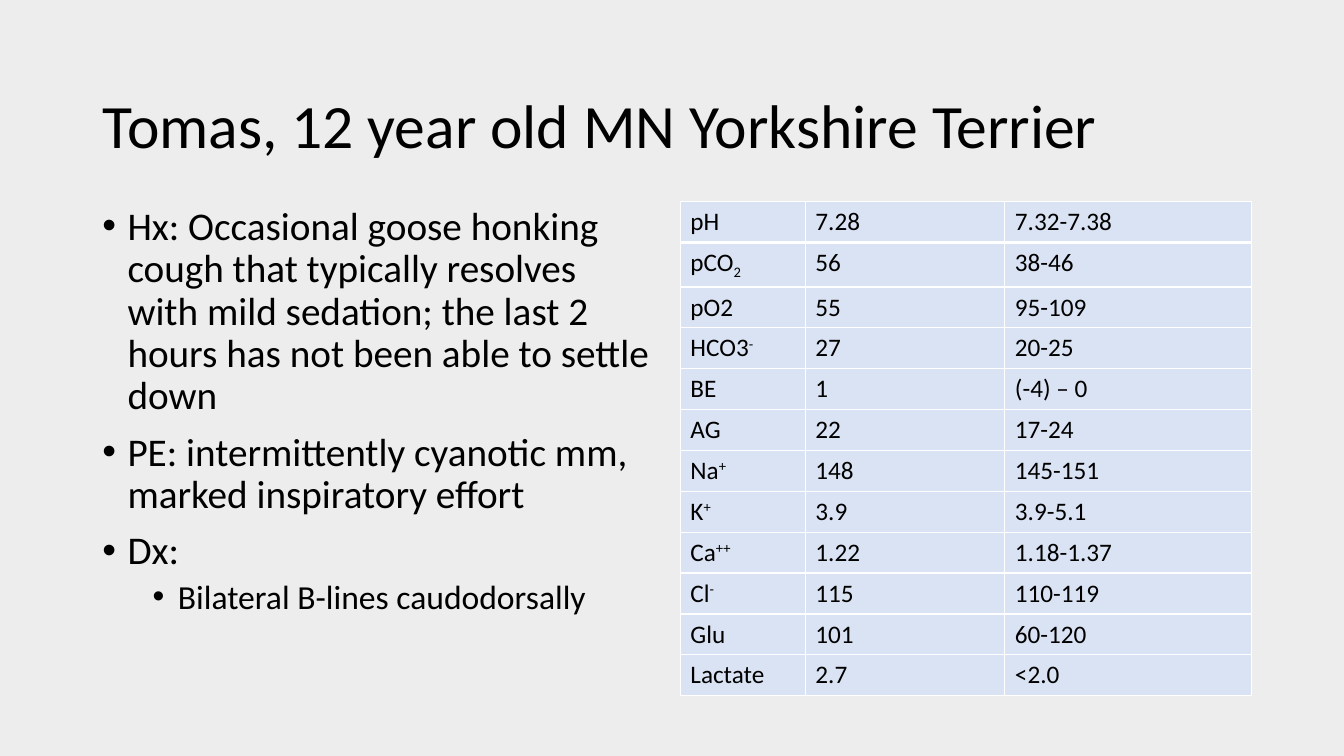
from pptx import Presentation
from pptx.dml.color import RGBColor
from pptx.enum.text import MSO_ANCHOR as Anchor, MSO_AUTO_SIZE as AutoSize, PP_ALIGN as Align
from pptx.oxml.ns import qn
from pptx.util import Pt
from lxml.etree import SubElement

COLORS = {"background": "EDEDED", "text": "000000", "cell": "DAE3F3", "border": "FFFFFF"}
FONT = "Calibri"
TITLE = "Tomas, 12 year old MN Yorkshire Terrier"
HISTORY = [
    (0, "Hx: Occasional goose honking cough that typically resolves with mild sedation; "
        "the last 2 hours has not been able to settle down"),
    (0, "PE: intermittently cyanotic mm, marked inspiratory effort"),
    (0, "Dx:"),
    (1, "Bilateral B-lines caudodorsally"),
]
BLOOD_GAS = [
    ("pH", "", "7.28", "7.32-7.38"),
    ("pCO", "2", "56", "38-46"),
    ("pO2", "", "55", "95-109"),
    ("HCO3", "-", "27", "20-25"),
    ("BE", "", "1", "(-4) – 0"),
    ("AG", "", "22", "17-24"),
    ("Na", "+", "148", "145-151"),
    ("K", "+", "3.9", "3.9-5.1"),
    ("Ca", "++", "1.22", "1.18-1.37"),
    ("Cl", "-", "115", "110-119"),
    ("Glu", "", "101", "60-120"),
    ("Lactate", "", "2.7", "<2.0"),
]


def color(name):
    return RGBColor.from_string(COLORS[name])


class CaseSlide:
    def __init__(self, deck):
        self.slide = deck.slides.add_slide(deck.slide_layouts[5])
        backdrop = self.slide.background.fill
        backdrop.solid()
        backdrop.fore_color.rgb = color("background")

    def style(self, paragraph, size):
        for run in paragraph.runs:
            run.font.name = FONT
            run.font.size = Pt(size)
            run.font.bold = False
            run.font.color.rgb = color("text")

    def title(self, text, left, top, width, height):
        heading = self.slide.shapes.title
        heading.left, heading.top, heading.width, heading.height = map(Pt, (left, top, width, height))
        frame = heading.text_frame
        frame.text = text
        frame.word_wrap = True
        frame.auto_size = AutoSize.NONE
        frame.vertical_anchor = Anchor.MIDDLE
        paragraph = frame.paragraphs[0]
        paragraph.alignment = Align.LEFT
        paragraph.line_spacing = 0.9
        self.style(paragraph, 44)

    def bullets(self, items, left, top, width, height):
        frame = self.slide.shapes.add_textbox(*map(Pt, (left, top, width, height))).text_frame
        frame.word_wrap = True
        frame.text = "\n".join(text for _, text in items)
        for paragraph, (level, _) in zip(frame.paragraphs, items):
            paragraph.level = level
            paragraph.line_spacing = 0.9
            paragraph.space_before = Pt(5 if level else 10)
            self.style(paragraph, 24 if level else 28)
            properties = paragraph._p.get_or_add_pPr()
            properties.set("marL", str(Pt(18 + 36 * level)))
            properties.set("indent", str(Pt(-18)))
            SubElement(properties, qn("a:buFont"), typeface="Arial")
            SubElement(properties, qn("a:buChar"), char="•")

    def borders(self, cell, **widths):
        properties = cell._tc.get_or_add_tcPr()
        for side, width in widths.items():
            line = SubElement(properties, qn(f"a:ln{side}"), w=str(Pt(width)))
            fill = SubElement(line, qn("a:solidFill"))
            SubElement(fill, qn("a:srgbClr"), val=COLORS["border"])

    def cell(self, cell, text, script, row):
        paragraph = cell.text_frame.paragraphs[0]
        paragraph.text = text
        if script:
            mark = paragraph.add_run()
            mark.text = script
            offset = -25000 if script.isdigit() else 30000
            mark.font._element.set("baseline", str(offset))
        self.style(paragraph, 18)
        self.borders(cell, L=1, R=1, T=3 if row == 1 else 1, B=3 if row == 0 else 1)
        cell.fill.solid()
        cell.fill.fore_color.rgb = color("cell")

    def table(self, rows, widths, left, top, row_height):
        place = map(Pt, (left, top, sum(widths), row_height * len(rows)))
        results = self.slide.shapes.add_table(len(rows), len(widths), *place).table
        results.first_row = results.horz_banding = False
        for column, width in zip(results.columns, widths):
            column.width = Pt(width)
        for index, (analyte, script, value, reference) in enumerate(rows):
            results.rows[index].height = Pt(row_height)
            entries = [(analyte, script), (value, ""), (reference, "")]
            for column, (text, mark) in enumerate(entries):
                self.cell(results.cell(index, column), text, mark, index)


def main():
    deck = Presentation()
    deck.slide_width, deck.slide_height = Pt(960), Pt(540)
    case = CaseSlide(deck)
    case.title(TITLE, 66, 39.6, 828, 104.4)
    case.bullets(HISTORY, 66, 144, 408, 342.7)
    case.table(BLOOD_GAS, [89.3, 142.5, 176.2], 486, 144, 29.2)
    deck.save("out.pptx")


if __name__ == "__main__":
    main()
